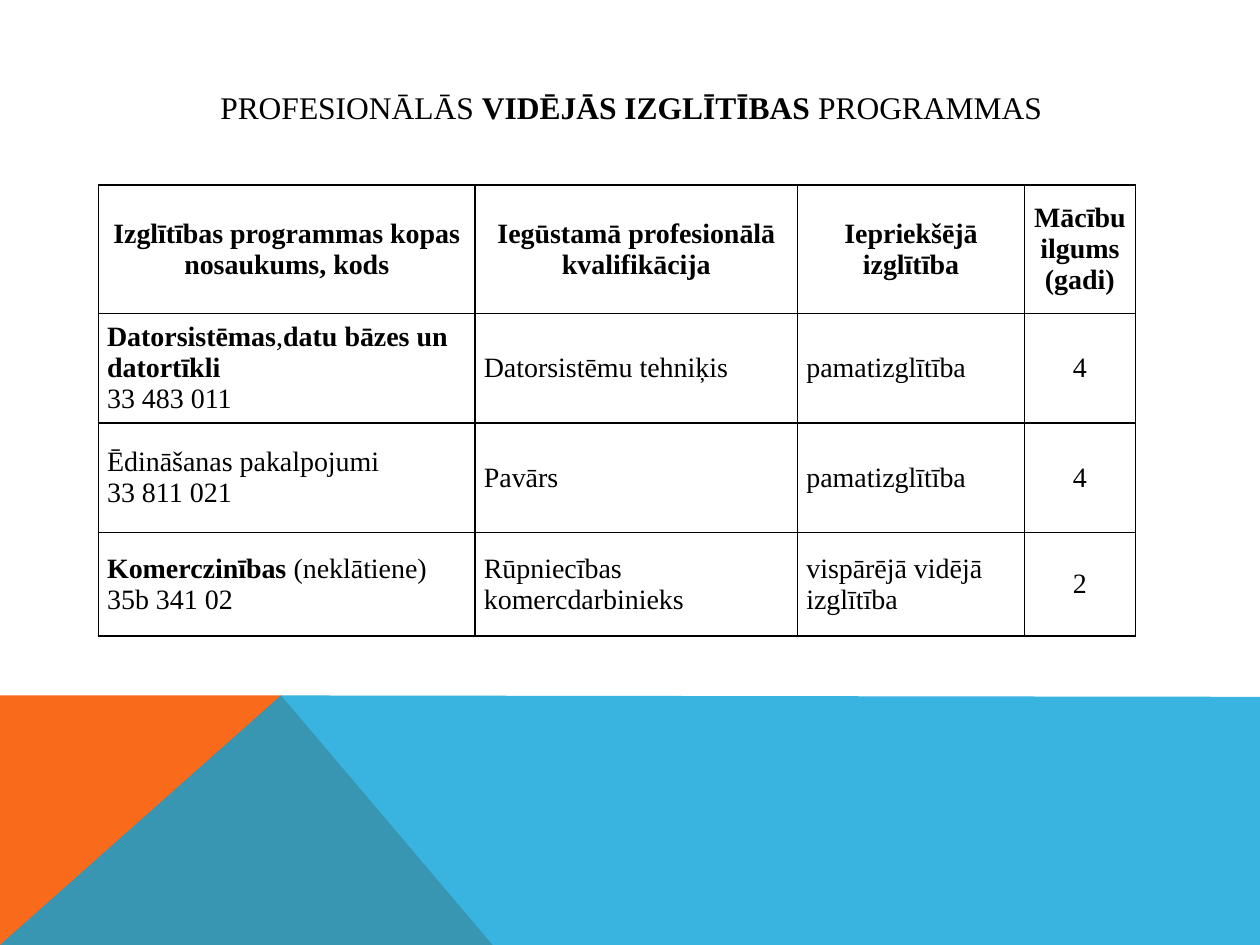
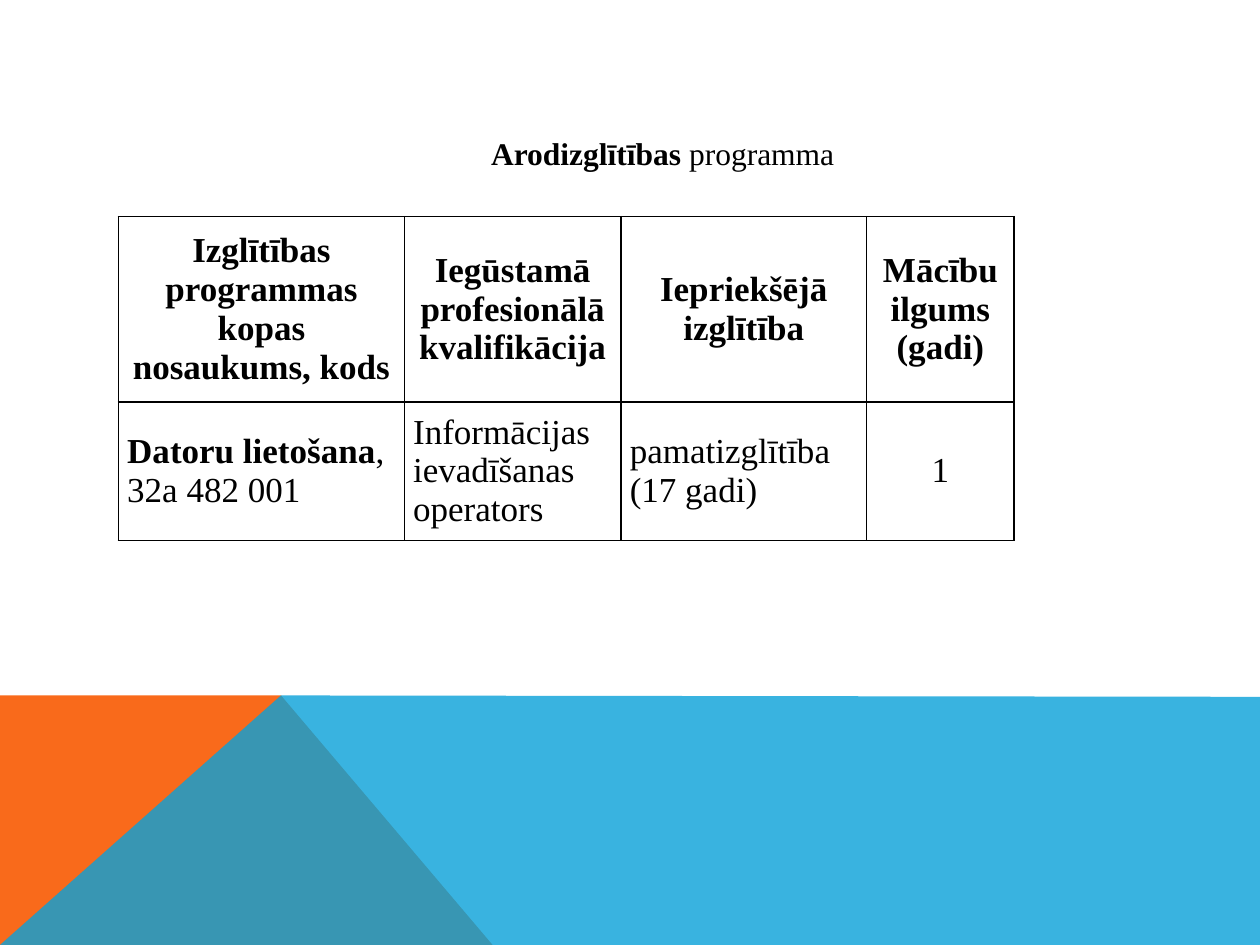
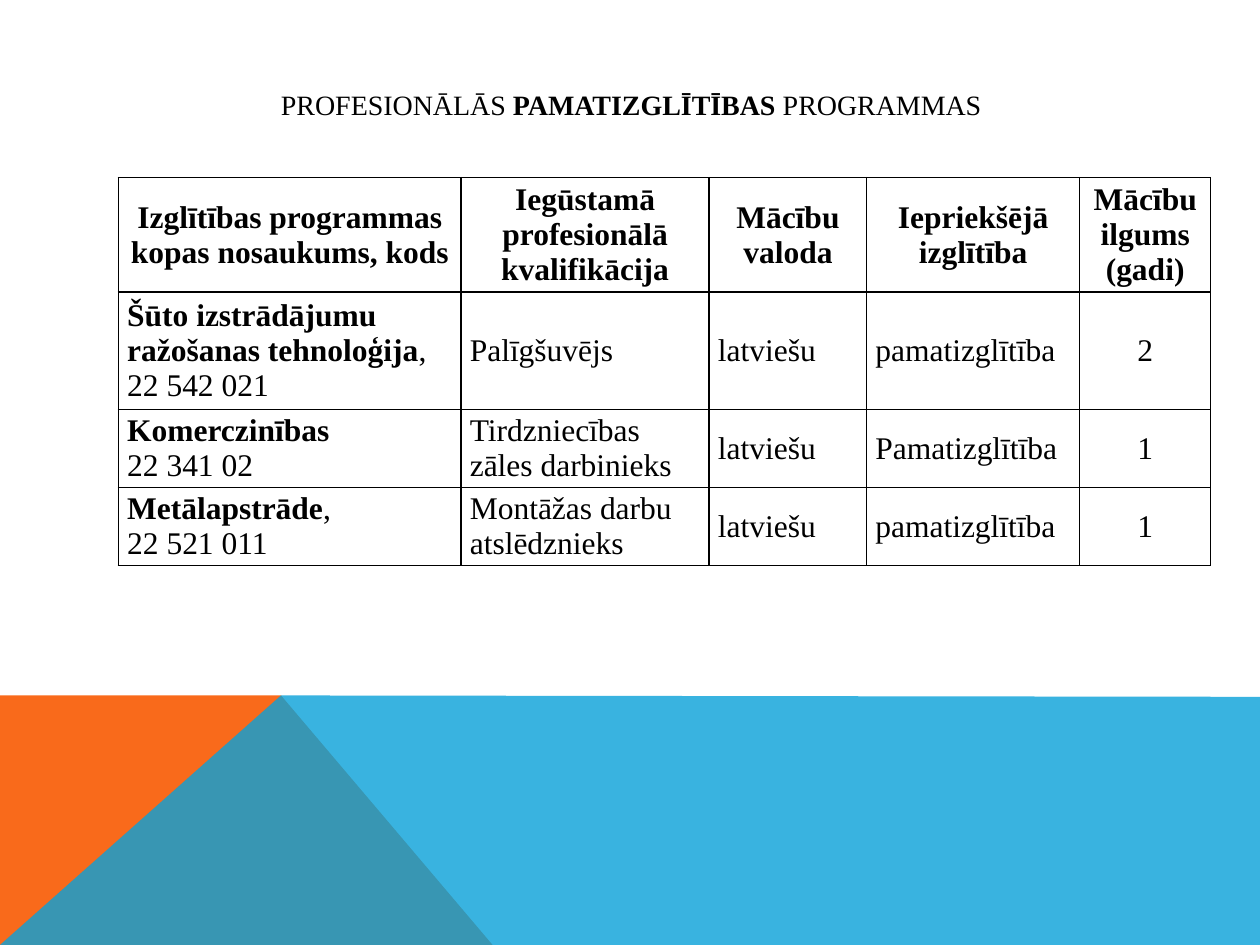
import pptx
import pptx.dml.color
import pptx.enum.text
import pptx.oxml
import pptx.oxml.ns
import pptx.util

Pt = pptx.util.Pt
ALIGN = pptx.enum.text.PP_ALIGN
ANCHOR = pptx.enum.text.MSO_ANCHOR

FONT = "Times New Roman"
BLACK, WHITE, ORANGE, BLUE = "000000", "FFFFFF", "F96A1B", "08A1D9"
WIDTH, HEIGHT = 720, 540
BAND_TOP = 397.4
TITLE_LEFT, TITLE_WIDTH = 64.8, 591.8

BANDS = [
    (ORANGE, 100, [(0, HEIGHT), (0, BAND_TOP), (160.6, BAND_TOP), (281.5, HEIGHT)]),
    (BLUE, 80, [(0, HEIGHT), (160.6, BAND_TOP), (WIDTH, 398.2), (WIDTH, HEIGHT)]),
]

PROGRAM = "Izglītības programmas kopas nosaukums, kods"
QUALIFICATION = "Iegūstamā profesionālā kvalifikācija"
LANGUAGE = "Mācību valoda"
PRIOR = "Iepriekšējā izglītība"
YEARS = "Mācību ilgums (gadi)"

# Asterisks enclose bold words.
SLIDES = [
    {
        "title": "PROFESIONĀLĀS *VIDĒJĀS IZGLĪTĪBAS* PROGRAMMAS",
        "title_size": 18, "title_top": 28.8, "title_height": 43.2,
        "title_below": 0, "title_indent": 0,
        "table_left": 56.2, "table_top": 105.8, "table_size": 16,
        "columns": [215.3, 184.3, 129.6, 63.4],
        "row_heights": [73.4, 62.6, 62.6, 59],
        "header": [PROGRAM, QUALIFICATION, PRIOR, YEARS],
        "rows": [
            ["*Datorsistēmas*,*datu bāzes un datortīkli*\n33 483 011",
             "Datorsistēmu tehniķis", "pamatizglītība", "4"],
            ["Ēdināšanas pakalpojumi\n33 811 021", "Pavārs", "pamatizglītība", "4"],
            ["*Komerczinības* (neklātiene) 35b 341 02",
             "Rūpniecības komercdarbinieks", "vispārējā vidējā izglītība", "2"],
        ],
    },
    {
        "title": "*Arodizglītības* programma",
        "title_size": 18, "title_top": 49, "title_height": 56.9,
        "title_below": 7.6, "title_indent": 36,
        "table_left": 67.7, "table_top": 123.8, "table_size": 20,
        "columns": [163.4, 123.8, 140.4, 84.2],
        "row_heights": [105.8, 79.2],
        "header": [PROGRAM, QUALIFICATION, PRIOR, YEARS],
        "rows": [
            ["*Datoru lietošana*,\n32a 482 001", "Informācijas ievadīšanas operators",
             "pamatizglītība (17 gadi)", "1"],
        ],
    },
    {
        "title": "PROFESIONĀLĀS *PAMATIZGLĪTĪBAS* PROGRAMMAS",
        "title_size": 16, "title_top": 16.6, "title_height": 84.2,
        "title_below": 31.5, "title_indent": 0,
        "table_left": 67.7, "table_top": 101.5, "table_size": 18,
        "columns": [195.8, 141.8, 90, 121.7, 74.9],
        "row_heights": [65.5, 67, 44.6, 44.6],
        "header": [PROGRAM, QUALIFICATION, LANGUAGE, PRIOR, YEARS],
        "rows": [
            ["*Šūto izstrādājumu ražošanas tehnoloģija*,\n22 542 021",
             "Palīgšuvējs", "latviešu", "pamatizglītība", "2"],
            ["*Komerczinības*\n22 341 02", "Tirdzniecības zāles darbinieks",
             "latviešu", "Pamatizglītība", "1"],
            ["*Metālapstrāde*,\n22 521 011", "Montāžas darbu atslēdznieks",
             "latviešu", "pamatizglītība", "1"],
        ],
    },
]


def color(value):
    return pptx.dml.color.RGBColor.from_string(value)


def write_text(frame, text, size, align=ALIGN.LEFT):
    for index, line in enumerate(text.split("\n")):
        para = frame.add_paragraph() if index else frame.paragraphs[0]
        para.alignment = align
        for position, words in enumerate(line.split("*")):
            if words:
                span = para.add_run()
                span.text = words
                span.font.name = FONT
                span.font.size = Pt(size)
                span.font.bold = position % 2 == 1
                span.font.color.rgb = color(BLACK)


def add_bands(page, layout):
    title, *others = layout.placeholders
    for other in others:
        other.element.getparent().remove(other.element)
    for fill, opacity, points in BANDS:
        start, *corners = [(Pt(x), Pt(y)) for x, y in points]
        builder = page.shapes.build_freeform(*start)
        builder.add_line_segments(corners, close=True)
        band = builder.convert_to_shape()
        band.shadow.inherit = False
        band.fill.solid()
        band.fill.fore_color.rgb = color(fill)
        band.line.fill.background()
        if opacity < 100:
            tint = band.element.find(".//" + pptx.oxml.ns.qn("a:srgbClr"))
            tint.append(pptx.oxml.parse_xml(
                f'<a:alpha {pptx.oxml.ns.nsdecls("a")} val="{opacity * 1000}"/>'))
        title.element.addprevious(band.element)


def add_title(page, content):
    title = page.shapes.title
    title.left, title.top = Pt(TITLE_LEFT), Pt(content["title_top"])
    title.width, title.height = Pt(TITLE_WIDTH), Pt(content["title_height"])
    frame = title.text_frame
    frame.word_wrap = True
    frame.auto_size = pptx.enum.text.MSO_AUTO_SIZE.NONE
    frame.vertical_anchor = ANCHOR.BOTTOM
    frame.margin_left = Pt(7.2 + content["title_indent"])
    frame.margin_bottom = Pt(content["title_below"])
    write_text(frame, content["title"], content["title_size"], ALIGN.CENTER)


def format_cell(cell):
    cell.margin_left = cell.margin_right = Pt(5)
    cell.margin_top = cell.margin_bottom = 0
    cell.vertical_anchor = ANCHOR.MIDDLE
    properties = cell._tc.get_or_add_tcPr()
    for side in "LRTB":
        properties.append(pptx.oxml.parse_xml(
            f'<a:ln{side} {pptx.oxml.ns.nsdecls("a")} w="{Pt(1)}"><a:solidFill>'
            f'<a:srgbClr val="{BLACK}"/></a:solidFill></a:ln{side}>'))
    cell.fill.solid()
    cell.fill.fore_color.rgb = color(WHITE)


def add_programs(page, content):
    columns, heights = content["columns"], content["row_heights"]
    table = page.shapes.add_table(
        len(heights), len(columns), Pt(content["table_left"]), Pt(content["table_top"]),
        Pt(sum(columns)), Pt(sum(heights))).table
    table.first_row = table.horz_banding = False
    for column, width in zip(table.columns, columns):
        column.width = Pt(width)
    for row, height in zip(table.rows, heights):
        row.height = Pt(height)
    header = [f"*{name}*" for name in content["header"]]
    for row_index, texts in enumerate([header] + content["rows"]):
        for column_index, text in enumerate(texts):
            cell = table.cell(row_index, column_index)
            format_cell(cell)
            centered = row_index == 0 or column_index == len(columns) - 1
            write_text(cell.text_frame, text, content["table_size"],
                       ALIGN.CENTER if centered else ALIGN.LEFT)


def main():
    deck = pptx.Presentation()
    deck.slide_width, deck.slide_height = Pt(WIDTH), Pt(HEIGHT)
    layout = deck.slide_layouts[5]
    for index, content in enumerate(SLIDES):
        page = deck.slides.add_slide(layout)
        if index == 0:
            add_bands(page, layout)
        add_title(page, content)
        add_programs(page, content)
    deck.save("out.pptx")


if __name__ == "__main__":
    main()
